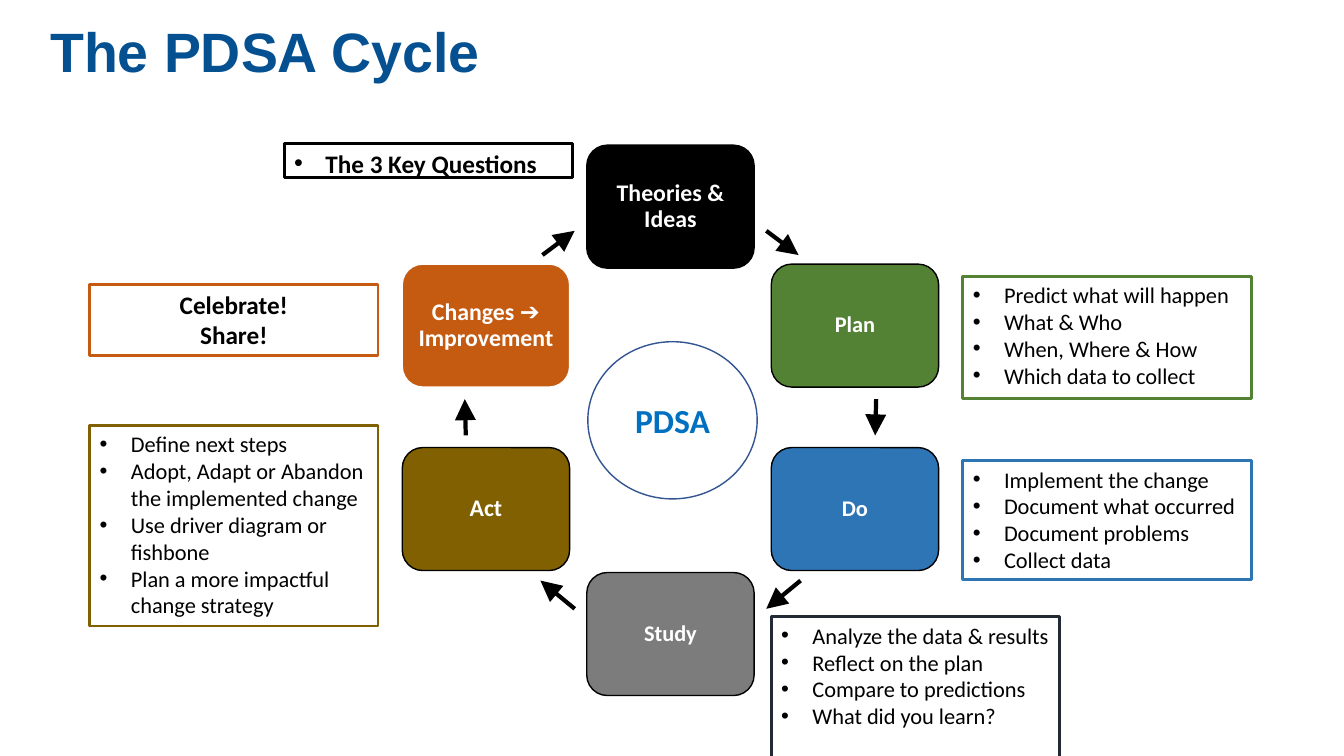
from pptx import Presentation
from pptx.dml.color import RGBColor
from pptx.enum.shapes import MSO_CONNECTOR, MSO_SHAPE
from pptx.enum.text import MSO_ANCHOR, PP_ALIGN
from pptx.oxml.ns import qn
from pptx.util import Pt
from lxml import etree

RECT, ROUNDED = MSO_SHAPE.RECTANGLE, MSO_SHAPE.ROUNDED_RECTANGLE
CIRCLE = MSO_SHAPE.FLOWCHART_CONNECTOR
STRAIGHT = MSO_CONNECTOR.STRAIGHT
TOP, MIDDLE = MSO_ANCHOR.TOP, MSO_ANCHOR.MIDDLE
LEFT, CENTER = PP_ALIGN.LEFT, PP_ALIGN.CENTER
PX = 9144  # 100 px to the inch


def color(code):
    return RGBColor.from_string(code)


def add_box(kind, place, lines, size, ink, fill=None, line=None, width=1, bold=False,
            align=CENTER, anchor=MIDDLE, bullets=False, spacing=1.0, inset=10, font="Calibri"):
    box = page.shapes.add_shape(kind, *[value * PX for value in place])
    box.shadow.inherit = False
    if fill:
        box.fill.solid()
        box.fill.fore_color.rgb = color(fill)
    else:
        box.fill.background()
    if line:
        box.line.color.rgb = color(line)
        box.line.width = Pt(width)
    else:
        box.line.fill.background()
    frame = box.text_frame
    frame.word_wrap = True
    frame.vertical_anchor = anchor
    frame.margin_left = frame.margin_right = inset * PX
    frame.margin_top = frame.margin_bottom = 5 * PX
    frame.text = "\n".join(lines)
    for para in frame.paragraphs:
        para.alignment = align
        para.line_spacing = spacing
        if bullets:
            properties = para._p.get_or_add_pPr()
            properties.set("marL", str(31 * PX))
            properties.set("indent", str(-31 * PX))
            etree.SubElement(properties, qn("a:buFont")).set("typeface", "Arial")
            etree.SubElement(properties, qn("a:buChar")).set("char", "•")
        for span in para.runs:
            span.font.name = font
            span.font.size = Pt(size)
            span.font.bold = bold
            span.font.color.rgb = color(ink)


deck = Presentation()
deck.slide_width, deck.slide_height = 1333 * PX, 750 * PX
page = deck.slides.add_slide(deck.slide_layouts[6])

# Title
add_box(RECT, (40, 22, 1150, 64), ["The PDSA Cycle"], 39.6, "045091",
        bold=True, align=LEFT, spacing=0.9, font="Arial")

# Stages of the cycle, clockwise from the top
stages = [
    (582, 144, "Theories & Ideas", 17, "000000", "000000"),
    (765, 262, "Plan", 16, "548235", "000000"),
    (765, 444, "Do", 16, "2E75B6", "000000"),
    (582, 568, "Study", 16, "7C7C7C", "000000"),
    (399, 444, "Act", 17, "806000", "000000"),
    (399, 262, "Changes ➔ Improvement", 17, "C55A11", "FFFFFF"),
]
for left, top, label, size, fill, line in stages:
    add_box(ROUNDED, (left, top, 166, 122), [label], size, "FFFFFF", fill, line,
            bold=True, spacing=0.9, inset=6)

# Arrows between the stages
arrows = [
    (760, 229, 792, 253), (869, 396, 868, 432), (794, 576, 760, 604),
    (570, 604, 536, 576), (462, 432, 461, 396), (538, 253, 570, 229),
]
for ends in arrows:
    arrow = page.shapes.add_connector(STRAIGHT, *[value * PX for value in ends])
    arrow.line.color.rgb = color("000000")
    arrow.line.width = Pt(3)
    head = etree.SubElement(arrow.line._get_or_add_ln(), qn("a:tailEnd"))
    for name, value in (("type", "triangle"), ("w", "lg"), ("len", "lg")):
        head.set(name, value)
    etree.SubElement(arrow._element.spPr, qn("a:effectLst"))

# Notes beside the stages
add_box(RECT, (282, 142, 286, 34), ["The 3 Key Questions"], 18, "000000", line="000000",
        width=2, bold=True, align=LEFT, anchor=TOP, bullets=True)
add_box(RECT, (89, 282, 286, 71), ["Celebrate!", "Share!"], 18, "000000", line="C55A11",
        width=2, bold=True, anchor=TOP)
notes = [
    (955, 274, 121, "548235", ["Predict what will happen", "What & Who",
                               "When, Where & How", "Which data to collect"]),
    (955, 457, 118, "2E75B6", ["Implement the change", "Document what occurred",
                               "Document problems", "Collect data"]),
    (765, 612, 148, "222A35", ["Analyze the data & results", "Reflect on the plan",
                               "Compare to predictions", "What did you learn?"]),
    (89, 422, 199, "806000", ["Define next steps",
                              "Adopt, Adapt or Abandon the implemented change",
                              "Use driver diagram or fishbone",
                              "Plan a more impactful change strategy"]),
]
for left, top, height, line, lines in notes:
    add_box(RECT, (left, top, 286, height), lines, 16, "000000", line=line,
            width=2, align=LEFT, anchor=TOP, bullets=True)

# Centre of the cycle
add_box(CIRCLE, (583, 339, 168, 156), ["PDSA"], 24, "0070C0", line="325491", bold=True)

deck.save("out.pptx")
